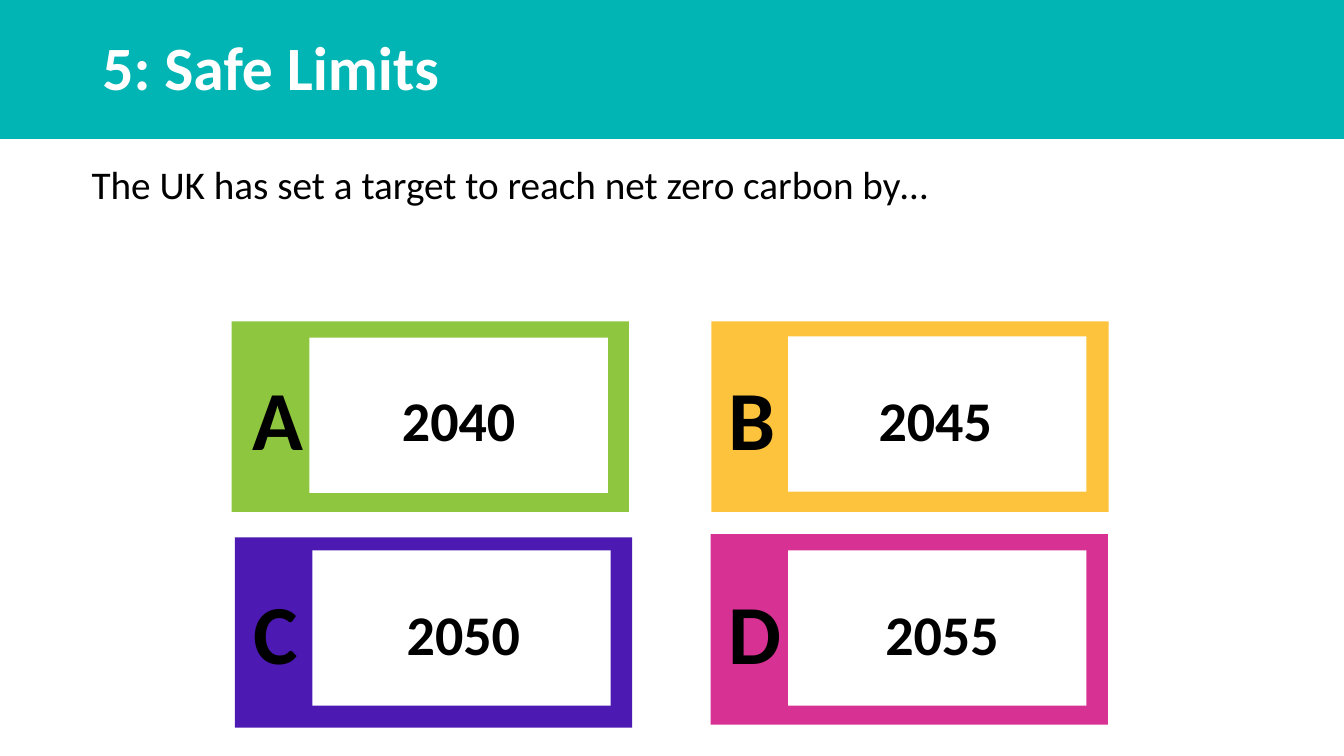
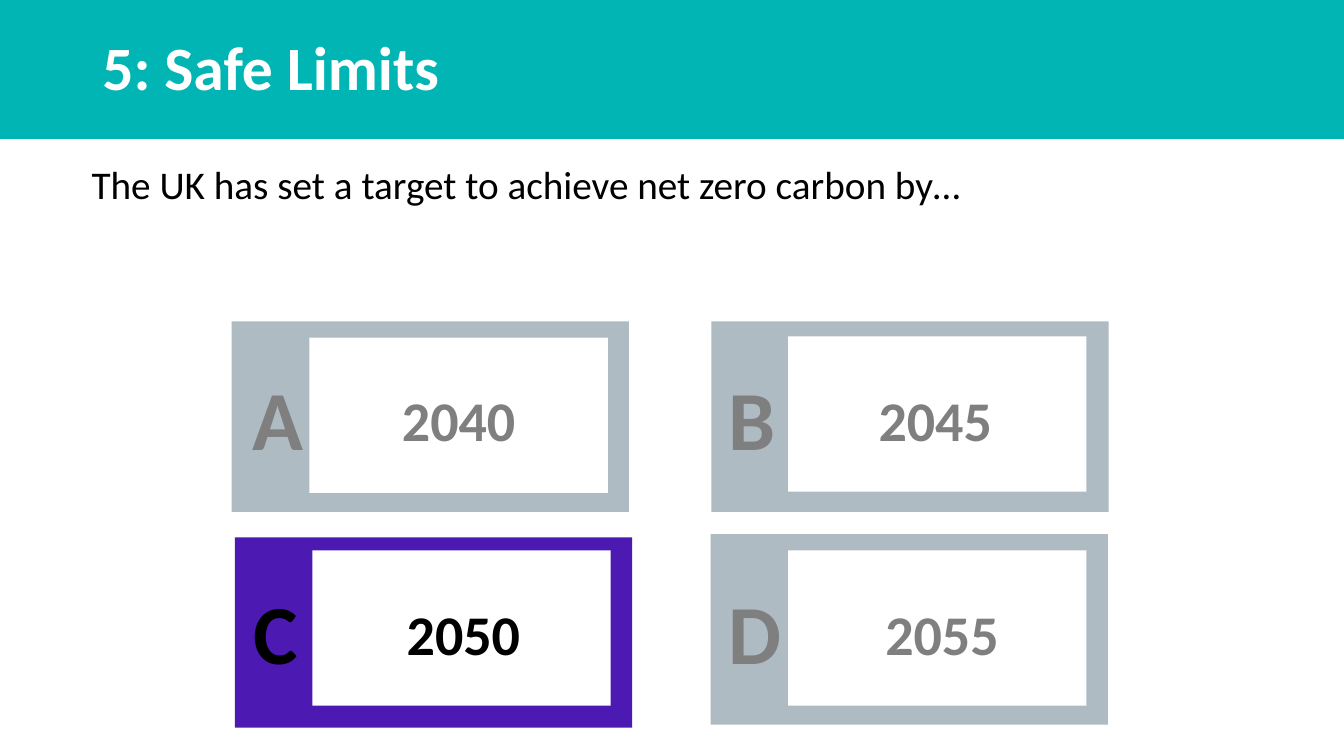
from pptx import Presentation
from pptx.dml.color import RGBColor
from pptx.enum.shapes import MSO_SHAPE as Shape
from pptx.enum.text import MSO_ANCHOR as Anchor, PP_ALIGN as Align
from pptx.util import Cm, Pt

FONT = "Calibri"
TEAL, WHITE, BLACK = "00B5B3", "FFFFFF", "000000"
FADED_FRAME, FADED_TEXT = "AFBBC3", "7F7F7F"

TITLE = "5: Safe Limits"
# Question, and the letters of the answers shown in full colour
QUESTIONS = [
    ("The UK has set a target to reach net zero carbon by…", "ABCD"),
    ("The UK has set a target to achieve net zero carbon by…", "C"),
]
# Letter, year, colour, frame corner, panel corner, centre of the year (cm)
ANSWERS = [
    ("A", "2040", "8EC63F", (5.84, 8.1), (7.8, 8.51), 11.56),
    ("B", "2045", "FEC33D", (17.93, 8.1), (19.86, 8.48), 23.57),
    ("C", "2050", "4C1AB2", (5.92, 13.54), (7.87, 13.87), 11.68),
    ("D", "2055", "D73194", (17.91, 13.46), (19.86, 13.87), 23.74),
]

SLIDE_W, SLIDE_H = 33.87, 19.05
FRAME_SIZE = (10.01, 4.8)
PANEL_SIZE = (7.52, 3.91)
LETTER_SIZE = (1.68, 1.63)
YEAR_SIZE = (7.52, 1.96)
LETTER_COLUMNS = (6.12, 18.11)
LETTER_ROWS = (9.68, 15.09)
YEAR_RISE = 0.1


def rgb(value):
    return RGBColor.from_string(value)


def add_block(slide, corner, size, color):
    block = slide.shapes.add_shape(Shape.RECTANGLE, *map(Cm, corner + size))
    block.fill.solid()
    block.fill.fore_color.rgb = rgb(color)
    block.line.fill.background()
    block.shadow.inherit = False


def add_text(slide, text, corner, size, *, points, color=BLACK, bold=False,
             align=Align.LEFT, anchor=Anchor.TOP, spacing=1.0):
    frame = slide.shapes.add_textbox(*map(Cm, corner + size)).text_frame
    frame.word_wrap = True
    frame.vertical_anchor = anchor
    paragraph = frame.paragraphs[0]
    paragraph.text = text
    paragraph.alignment = align
    paragraph.line_spacing = spacing
    font = paragraph.font
    font.name, font.size, font.bold = FONT, Pt(points), bold
    font.color.rgb = rgb(color)


def add_heading(slide, question):
    add_block(slide, (0, 0), (SLIDE_W, 3.5), TEAL)
    add_text(slide, TITLE, (2.33, 0.56), (29.21, 2.46), points=44,
             color=WHITE, bold=True, anchor=Anchor.MIDDLE, spacing=0.9)
    add_text(slide, question, (2.06, 4.04), (31.75, 3.23), points=28,
             spacing=0.9)


def add_answer(slide, position, answer, highlighted):
    letter, year, color, frame_corner, panel_corner, year_centre = answer
    row, column = divmod(position, 2)
    letter_top = LETTER_ROWS[row]
    style = dict(color=BLACK if highlighted else FADED_TEXT, bold=True,
                 align=Align.CENTER)

    add_block(slide, frame_corner, FRAME_SIZE,
              color if highlighted else FADED_FRAME)
    add_text(slide, letter, (LETTER_COLUMNS[column], letter_top), LETTER_SIZE,
             points=60, anchor=Anchor.MIDDLE, **style)
    add_block(slide, panel_corner, PANEL_SIZE, WHITE)
    year_corner = (year_centre - YEAR_SIZE[0] / 2, letter_top - YEAR_RISE)
    add_text(slide, year, year_corner, YEAR_SIZE, points=40, **style)


def main():
    deck = Presentation()
    deck.slide_width, deck.slide_height = Cm(SLIDE_W), Cm(SLIDE_H)
    blank = deck.slide_layouts[6]
    for question, highlighted in QUESTIONS:
        slide = deck.slides.add_slide(blank)
        add_heading(slide, question)
        for position, answer in enumerate(ANSWERS):
            add_answer(slide, position, answer, answer[0] in highlighted)
    deck.save("out.pptx")


if __name__ == "__main__":
    main()
